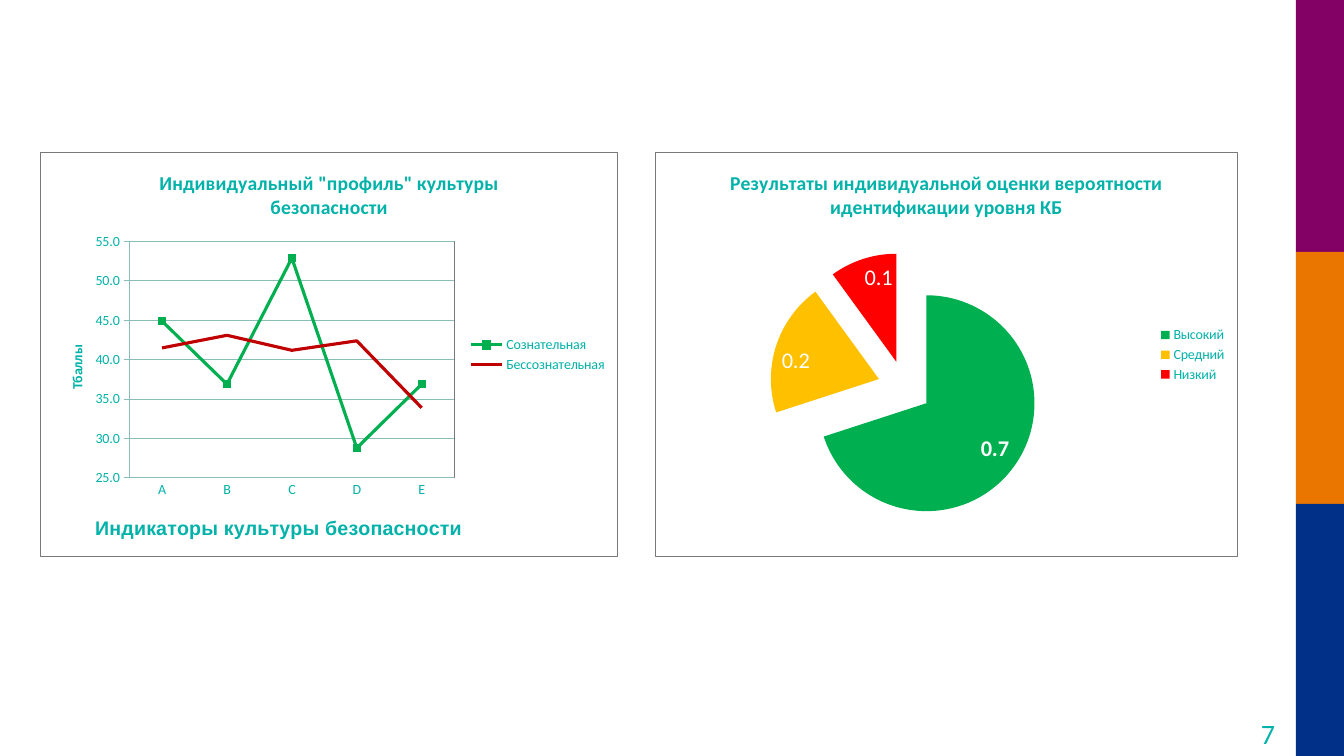
"""Build the slide with a safety culture profile and its level probabilities."""
import pptx
import pptx.chart.data
import pptx.dml.color
import pptx.enum.chart
import pptx.enum.shapes
import pptx.enum.text
import pptx.oxml
import pptx.util
from pptx.oxml.ns import nsdecls, qn

Pt = pptx.util.Pt
RGBColor = pptx.dml.color.RGBColor
ChartType = pptx.enum.chart.XL_CHART_TYPE
TickMark = pptx.enum.chart.XL_TICK_MARK
LabelPosition = pptx.enum.chart.XL_LABEL_POSITION

PURPLE = RGBColor(0x83, 0x00, 0x65)
ORANGE = RGBColor(0xEA, 0x76, 0x00)
NAVY = RGBColor(0x00, 0x30, 0x87)
TEAL = RGBColor(0x00, 0xB2, 0xA9)
PALE_TEAL = RGBColor(0x8A, 0xBD, 0xB8)
GREEN = RGBColor(0x00, 0xB0, 0x50)
AMBER = RGBColor(0xFF, 0xC0, 0x00)
RED = RGBColor(0xFF, 0x00, 0x00)
DARK_RED = RGBColor(0xC0, 0x00, 0x00)
WHITE = RGBColor(0xFF, 0xFF, 0xFF)
GREY = "797979"

SLIDE_WIDTH, SLIDE_HEIGHT = 960, 540
BAND_LEFT = 925.7
BANDS = [PURPLE, ORANGE, NAVY]
PAGE = "7"
CHART_TOP, CHART_HEIGHT = 108.7, 289.4

PROFILE_TITLE = 'Индивидуальный "профиль" культуры безопасности'
INDICATORS = ["A", "B", "C", "D", "E"]
INDICATOR_TITLE = "Индикаторы культуры безопасности"
SCORE_TITLE = "Tбаллы"
PROFILES = [
    ("Сознательная", [44.9, 36.9, 52.9, 28.8, 36.9], GREEN, True),
    ("Бессознательная", [41.5, 43.1, 41.2, 42.4, 33.9], DARK_RED, False),
]
PROBABILITY_TITLE = "Результаты индивидуальной оценки вероятности идентификации уровня КБ"
LEVELS = [("Высокий", 0.7, GREEN), ("Средний", 0.2, AMBER), ("Низкий", 0.1, RED)]


def style_font(font, size, color=TEAL, bold=False, name="Calibri"):
    font.size, font.bold, font.name = Pt(size), bold, name
    font.color.rgb = color


def write_title(owner, text, size, name="Calibri"):
    paragraph = owner.text_frame.paragraphs[0]
    paragraph.text = text
    style_font(paragraph.font, size, bold=True, name=name)


def border():
    return pptx.oxml.parse_xml(
        f'<c:spPr {nsdecls("c", "a")}><a:noFill/><a:ln w="9525"><a:solidFill>'
        f'<a:srgbClr val="{GREY}"/></a:solidFill></a:ln></c:spPr>')


def layout(x, y, size=None):
    parts = '<c:layoutTarget val="inner"/>' if size else ""
    parts += '<c:xMode val="edge"/><c:yMode val="edge"/>'
    parts += f'<c:x val="{x}"/><c:y val="{y}"/>'
    if size:
        parts += f'<c:w val="{size[0]}"/><c:h val="{size[1]}"/>'
    return pptx.oxml.parse_xml(
        f'<c:layout {nsdecls("c")}><c:manualLayout>{parts}</c:manualLayout></c:layout>')


def place_axis_title(axis_title, x, y):
    title = axis_title._element
    for automatic in title.findall(qn("c:layout")):
        title.remove(automatic)
    title.find(qn("c:tx")).addnext(layout(x, y))


def add_chart(slide, kind, left, width, data, title, plot_place):
    chart = slide.shapes.add_chart(
        kind, Pt(left), Pt(CHART_TOP), Pt(width), Pt(CHART_HEIGHT), data).chart
    style_font(chart.font, 10)
    chart.has_title = True
    write_title(chart.chart_title, title, 14)
    chart.chart_title.include_in_layout = False
    chart.has_legend = True
    chart.legend.position = pptx.enum.chart.XL_LEGEND_POSITION.RIGHT
    chart.legend.include_in_layout = False
    chart_body = chart._chartSpace.find(qn("c:chart"))
    chart_body.addnext(border())
    plot_area = chart_body.find(qn("c:plotArea"))
    for automatic in plot_area.findall(qn("c:layout")):
        plot_area.remove(automatic)
    plot_area.insert(0, layout(*plot_place))
    return chart, plot_area


def add_probabilities(slide):
    data = pptx.chart.data.CategoryChartData()
    data.categories = [level for level, _, _ in LEVELS]
    data.add_series("Series 1", [share for _, share, _ in LEVELS])
    chart, _ = add_chart(slide, ChartType.PIE, 468, 416.2, data,
                         PROBABILITY_TITLE, (0.08, 0.247, (0.696, 0.668)))
    plot = chart.plots[0]
    plot.vary_by_categories = True
    pie = plot.series[0]
    pie._element.find(qn("c:tx")).addnext(
        pptx.oxml.parse_xml(f'<c:explosion {nsdecls("c")} val="25"/>'))
    for index, (_, _, color) in enumerate(LEVELS):
        fill = pie.points[index].format.fill
        fill.solid()
        fill.fore_color.rgb = color
    labels = pie.data_labels
    labels.show_value = True
    labels.position = LabelPosition.INSIDE_END
    style_font(labels.font, 16, WHITE)
    main_label = pie.points[0].data_label
    style_font(main_label.font, 16, WHITE, bold=True)
    main_label.position = LabelPosition.INSIDE_END


def add_profile(slide):
    data = pptx.chart.data.CategoryChartData(number_format="0.0")
    data.categories = INDICATORS
    for name, scores, _, _ in PROFILES:
        data.add_series(name, scores)
    chart, plot_area = add_chart(slide, ChartType.LINE_MARKERS, 28.8, 412.6, data,
                                 PROFILE_TITLE, (0.154, 0.22, (0.563, 0.585)))
    plot_area.append(border())
    chart.plots[0].vary_by_categories = False
    for line, (_, _, color, marked) in zip(chart.plots[0].series, PROFILES):
        line.smooth = False
        line.format.line.color.rgb = color
        line.format.line.width = Pt(2.25)
        marker_style = pptx.enum.chart.XL_MARKER_STYLE
        line.marker.style = marker_style.SQUARE if marked else marker_style.NONE
        if marked:
            line.marker.size = 5
            line.marker.format.fill.solid()
            line.marker.format.fill.fore_color.rgb = color
            line.marker.format.line.color.rgb = color
    indicators, scores = chart.category_axis, chart.value_axis
    indicators.major_tick_mark = TickMark.NONE
    scores.major_tick_mark = TickMark.OUTSIDE
    scores.minimum_scale, scores.maximum_scale, scores.major_unit = 25, 55, 5
    scores.tick_labels.number_format = "0.0"
    scores.tick_labels.number_format_is_linked = False
    scores.has_major_gridlines = True
    for lined in (indicators, scores, scores.major_gridlines):
        lined.format.line.color.rgb = PALE_TEAL
        lined.format.line.width = Pt(0.75)
    write_title(indicators.axis_title, INDICATOR_TITLE, 14, "Arial")
    place_axis_title(indicators.axis_title, 0.088, 0.89)
    write_title(scores.axis_title, SCORE_TITLE, 10)
    place_axis_title(scores.axis_title, 0.043, 0.47)


def main():
    deck = pptx.Presentation()
    deck.slide_width, deck.slide_height = Pt(SLIDE_WIDTH), Pt(SLIDE_HEIGHT)
    slide = deck.slides.add_slide(deck.slide_layouts[6])
    band_height = SLIDE_HEIGHT / len(BANDS)
    for index, color in enumerate(BANDS):
        band = slide.shapes.add_shape(
            pptx.enum.shapes.MSO_SHAPE.RECTANGLE, Pt(BAND_LEFT), Pt(index * band_height),
            Pt(SLIDE_WIDTH - BAND_LEFT), Pt(band_height))
        band.shadow.inherit = False
        band.fill.solid()
        band.fill.fore_color.rgb = color
        band.line.fill.background()
    page = slide.shapes.add_textbox(Pt(868.3), Pt(514.1), Pt(42.5), Pt(19.4)).text_frame
    page.margin_left = page.margin_right = page.margin_top = page.margin_bottom = 0
    page.word_wrap = True
    page.vertical_anchor = pptx.enum.text.MSO_ANCHOR.MIDDLE
    number = page.paragraphs[0]
    number.text = PAGE
    number.alignment = pptx.enum.text.PP_ALIGN.RIGHT
    style_font(number.font, 20)
    add_probabilities(slide)
    add_profile(slide)
    deck.save("out.pptx")


if __name__ == "__main__":
    main()
